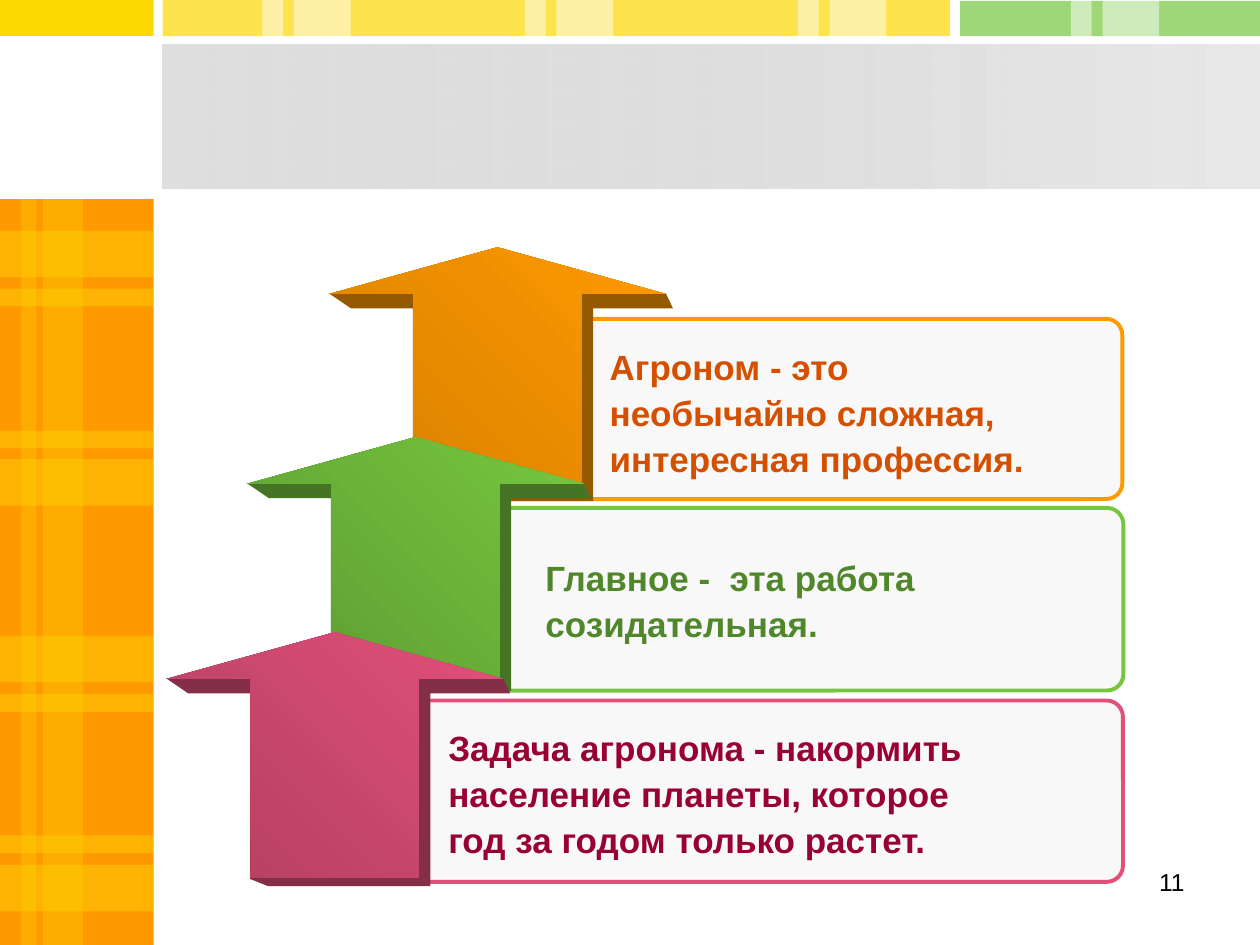
from lxml.etree import SubElement
from pptx import Presentation
from pptx.dml.color import RGBColor
from pptx.enum.shapes import MSO_SHAPE
from pptx.enum.text import PP_ALIGN
from pptx.oxml.ns import qn
from pptx.util import Pt

HUE = {
    "white": "FFFFFF", "black": "000000", "panel": "F8F8F8",
    "yellow": "FDD903", "orange": "FF9900", "green": "76C73F", "pink": "E2507A",
    "gray": "C0C0C0", "pale": "E8E8E8",
    "orange low": "D58000", "green low": "5C9B31", "pink low": "B13F60",
    "orange side": "955900", "green side": "457425", "pink side": "842F47",
    "orange text": "D45000", "green text": "50872A", "pink text": "990033",
}

deck = Presentation()
deck.slide_width, deck.slide_height = Pt(720), Pt(540)
slide = deck.slides.add_slide(deck.slide_layouts[6])
shapes = slide.shapes


def add_box(kind, left, top, wide, high, hue, alpha=100, low=None):
    """Add a borderless shape, solid or shaded from low to hue."""
    box = shapes.add_shape(kind, Pt(left), Pt(top), Pt(wide), Pt(high))
    box.shadow.inherit = False
    box.line.fill.background()
    if low:
        box.fill.gradient()
        for stop, name in zip(box.fill.gradient_stops, (low, hue)):
            stop.color.rgb = RGBColor.from_string(HUE[name])
    else:
        box.fill.solid()
        box.fill.fore_color.rgb = RGBColor.from_string(HUE[hue])
    if alpha < 100:
        color = next(box.element.iter(qn("a:srgbClr")))
        SubElement(color, qn("a:alpha")).set("val", str(alpha * 1000))
    return box


def add_text(left, top, wide, high, text, size, hue):
    """Add a wrapped text box and return its paragraph."""
    frame = shapes.add_textbox(Pt(left), Pt(top), Pt(wide), Pt(high)).text_frame
    frame.word_wrap = True
    para = frame.paragraphs[0]
    para.text = text
    para.font.name, para.font.size = "Arial", Pt(size)
    para.font.color.rgb = RGBColor.from_string(HUE[hue])
    return para


RECT = MSO_SHAPE.RECTANGLE

# Plain bands: left column, top strip and title bar
add_box(RECT, 0, 113.8, 87.8, 426.2, "orange")
add_box(RECT, 0, 0, 87.8, 20.5, "yellow")
add_box(RECT, 92.9, 0, 450, 20.7, "yellow", 70)
add_box(RECT, 548.5, 0.5, 171.5, 20.2, "green", 70)
bar = add_box(RECT, 92.6, 25.7, 627.4, 82.1, "pale", 50, low="gray")
bar.fill.gradient_angle = 0

# Plaid on the left column: a thick and a thin stripe per pair
for thick, thin in ((132, 165), (262.4, 246.2), (363.2, 396.7), (494.3, 477.4)):
    add_box(RECT, 0, thick, 87.8, 26.6, "yellow", 40)
    add_box(RECT, 0, thin, 87.8, 10.1, "yellow", 40)
for left, wide in ((12.2, 8.6), (24.5, 23)):
    add_box(RECT, left, 113.8, wide, 426.2, "yellow", 30)

# Pale stripes on the top strip
for left in (150, 300, 456, 612):
    add_box(RECT, left, 0, 11.8, 22.3, "white", 50)
    add_box(RECT, left + 18, 0, 32.4, 22.3, "white", 50)

# Panels: colour, left, top, width, height
for hue, left, top, wide, high in (
    ("orange", 248.4, 182.2, 393, 103),
    ("green", 249, 290.2, 393, 104.4),
    ("pink", 195.1, 400.3, 446.6, 103.7),
):
    panel = add_box(MSO_SHAPE.ROUNDED_RECTANGLE, left, top, wide, high, "panel")
    panel.adjustments[0] = 0.09
    panel.line.color.rgb = RGBColor.from_string(HUE[hue])
    panel.line.width = Pt(2.25)

# Arrows, each with a dark side below and to the right
SIDE = ((0, 26.3), (12.6, 34.9), (48, 34.9), (48, 141), (58, 145),
        (151, 145), (151, 34.9), (196.6, 34.9), (192.5, 26.3))
for hue, left, top in (("orange", 188, 141.3), ("green", 141.1, 249.8),
                       ("pink", 95, 361.3)):
    edge = [(Pt(left + x), Pt(top + y)) for x, y in SIDE]
    build = shapes.build_freeform(*edge[0])
    build.add_line_segments(edge[1:], close=True)
    side = build.convert_to_shape()
    side.shadow.inherit = False
    side.line.fill.background()
    side.fill.solid()
    side.fill.fore_color.rgb = RGBColor.from_string(HUE[hue + " side"])
    arrow = add_box(MSO_SHAPE.UP_ARROW, left, top, 192.5, 140.4, hue,
                    low=hue + " low")
    arrow.adjustments[0], arrow.adjustments[1] = 0.5, 0.19
    arrow.fill.gradient_angle = 45

# Panel texts
for hue, left, top, wide, high, text in (
    ("orange", 341.3, 191.5, 254.9, 87.1,
     "Агроном - это необычайно сложная, интересная профессия."),
    ("green", 304.6, 311.8, 282.2, 60.5,
     "Главное -  эта работа созидательная."),
    ("pink", 249.1, 409, 335.5, 87.1,
     "Задача агронома - накормить население планеты, которое "
     "год за годом только растет."),
):
    para = add_text(left, top, wide, high, text, 20, hue + " text")
    para.font.bold = True
    para.line_spacing = 1.1

# Slide number
para = add_text(516.2, 491.8, 167.8, 37.4, "11", 14, "black")
para.alignment = PP_ALIGN.RIGHT

deck.save("out.pptx")
